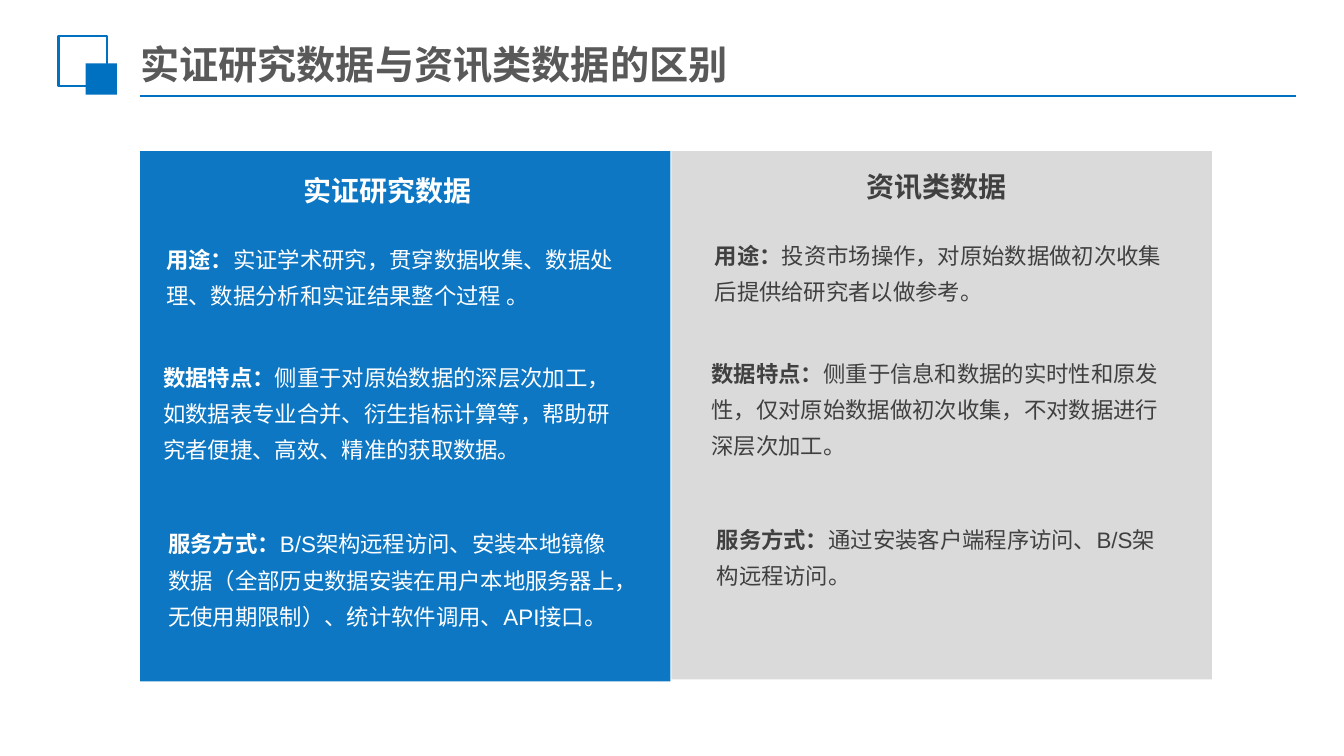
from lxml.etree import SubElement as Sub
from pptx import Presentation
from pptx.dml.color import RGBColor as Rgb
from pptx.enum.shapes import MSO_CONNECTOR as Link, MSO_SHAPE as Kind
from pptx.enum.text import MSO_ANCHOR as Anchor, MSO_AUTO_SIZE as Fit, PP_ALIGN as Align
from pptx.oxml.ns import qn
from pptx.util import Emu, Pt

BLUE, GREY, WHITE = "0070C0", "D9D9D9", "FFFFFF"
DARK, SLATE = "404040", "595959"
LATIN, HAN = "Arial", "Noto Sans CJK SC"


def px(*vals):
    return [Emu(val * 9144) for val in vals]


def hue(code):
    return Rgb.from_string(code)


class Page:
    """Holds the style and the current slide, and draws each kind of element."""

    def __init__(self, deck):
        self.slide = deck.slides.add_slide(deck.slide_layouts[5])
        self.shapes = self.slide.shapes

    def run(self, para, text, size, code, bold=True, face=LATIN):
        run = para.add_run()
        run.text = text
        font = run.font
        font.size, font.bold, font.name = Pt(size), bold, face
        font.color.rgb = hue(code)
        props = run._r.get_or_add_rPr()
        props.set("lang", "zh-CN")
        Sub(props, qn("a:ea")).set("typeface", HAN)

    def title(self, text, box):
        head = self.shapes.title
        head.left, head.top, head.width, head.height = px(*box)
        frame = head.text_frame
        frame.vertical_anchor = Anchor.MIDDLE
        frame.auto_size, frame.word_wrap = Fit.NONE, True
        frame.margin_left, frame.margin_top, frame.margin_right, frame.margin_bottom = px(7, 4, 7, 4)
        para = frame.paragraphs[0]
        para.alignment = Align.LEFT
        self.run(para, text, 28, SLATE, face=HAN)

    def line(self, ends, code, width):
        line = self.shapes.add_connector(Link.STRAIGHT, *px(*ends))
        line.line.color.rgb, line.line.width = hue(code), Pt(width)
        Sub(line._element.spPr, qn("a:effectLst"))

    def rect(self, box, fill=None, edge=None, alpha=100):
        rect = self.shapes.add_shape(Kind.RECTANGLE, *px(*box))
        rect.shadow.inherit = False
        if fill:
            rect.fill.solid()
            rect.fill.fore_color.rgb = hue(fill)
            tint = rect._element.spPr.find(qn("a:solidFill"))[0]
            Sub(tint, qn("a:alpha")).set("val", str(alpha * 1000))
        else:
            rect.fill.background()
        if edge:
            rect.line.color.rgb, rect.line.width = hue(edge), Pt(1.5)
        else:
            rect.line.fill.background()

    def text(self, box, code, size, lead, rest="", space=None, align=Align.LEFT):
        frame = self.shapes.add_textbox(*px(*box)).text_frame
        frame.word_wrap, frame.auto_size = True, Fit.SHAPE_TO_FIT_TEXT
        para = frame.paragraphs[0]
        para.alignment, para.line_spacing = align, space
        self.run(para, lead, size, code)
        if rest:
            self.run(para, rest, size, code, False)

    def panel(self, box, fill, alpha, code, head, spot, notes):
        self.rect(box, fill, alpha=alpha)
        left, top = spot
        self.text((left, top, 449, 44), code, 20, head, align=Align.CENTER)
        places = zip(LEADS, SHIFTS, notes)
        for lead, (right, down), (rest, high) in places:
            self.text((left + right, top + down, 468, high), code, 16, lead, rest, 1.35)


LEADS = "用途：", "数据特点：", "服务方式："
SHIFTS = (-5, 63), (-8, 180), (-3, 345)
STUDY = (
    ("实证学术研究，贯穿数据收集、数据处理、数据分析和实证结果整个过程 。", 79),
    ("侧重于对原始数据的深层次加工，如数据表专业合并、衍生指标计算等，帮助研究者便捷、高效、精准的获取数据。", 115),
    ("B/S架构远程访问、安装本地镜像数据（全部历史数据安装在用户本地服务器上，无使用期限制）、统计软件调用、API接口。", 119),
)
NEWS = (
    ("投资市场操作，对原始数据做初次收集后提供给研究者以做参考。", 83),
    ("侧重于信息和数据的实时性和原发性，仅对原始数据做初次收集，不对数据进行深层次加工。", 119),
    ("通过安装客户端程序访问、B/S架构远程访问。", 83),
)


def main():
    deck = Presentation()
    deck.slide_width, deck.slide_height = px(1333, 750)
    page = Page(deck)
    page.line((139, 95, 1285, 95), BLUE, 1.25)
    page.rect((58, 36, 48, 49), edge=BLUE)
    page.rect((85, 63, 31, 31), BLUE)
    page.title("实证研究数据与资讯类数据的区别", (132, 39, 860, 48))
    page.panel((139, 150, 526, 526), BLUE, 95, WHITE, "实证研究数据", (160, 167), STUDY)
    page.panel((666, 150, 536, 524), GREY, 96, DARK, "资讯类数据", (704, 163), NEWS)
    deck.save("out.pptx")


if __name__ == "__main__":
    main()
